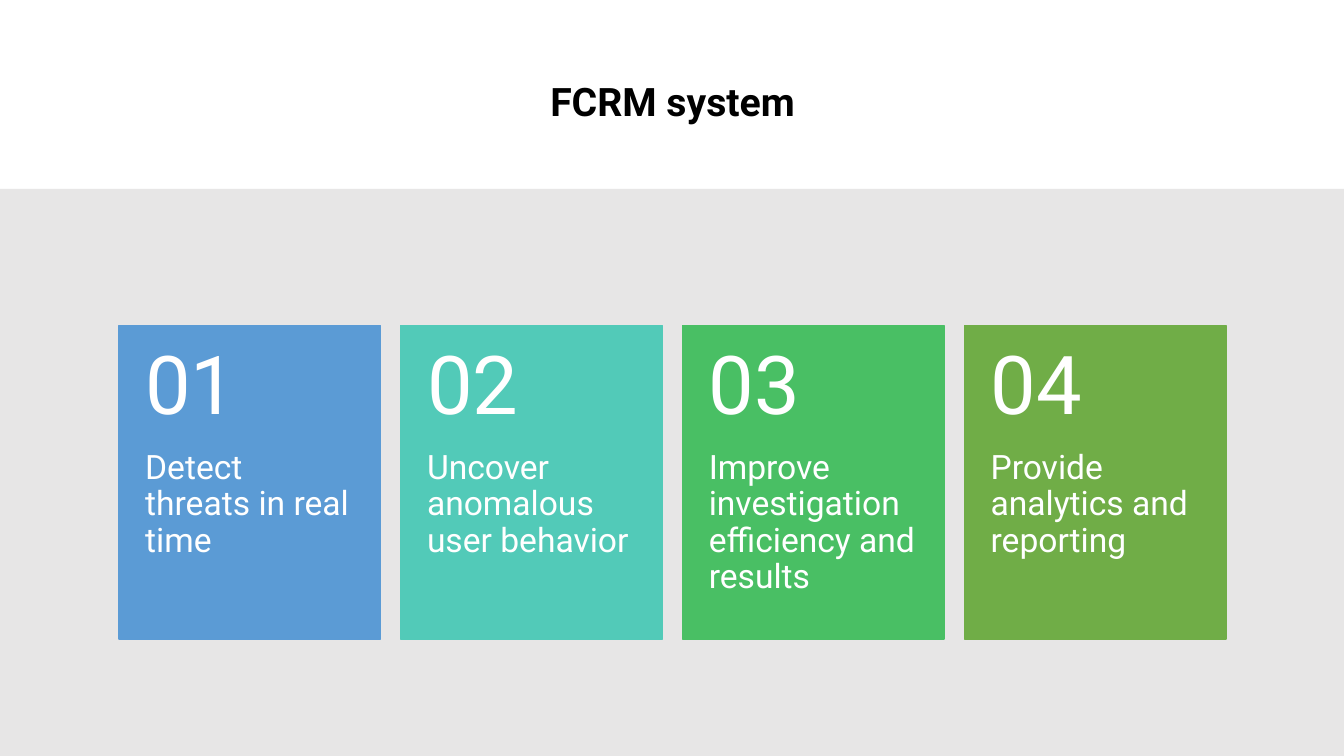
import pptx
import pptx.util
import pptx.dml.color
import pptx.enum.shapes
import pptx.enum.text

RGBColor = pptx.dml.color.RGBColor
Inches = pptx.util.Inches
PP_ALIGN = pptx.enum.text.PP_ALIGN
MSO_ANCHOR = pptx.enum.text.MSO_ANCHOR

BLACK = RGBColor(0x00, 0x00, 0x00)
WHITE = RGBColor(0xFF, 0xFF, 0xFF)
GREY = RGBColor(0xE7, 0xE6, 0xE6)
BLUE = RGBColor(0x5B, 0x9B, 0xD5)
TEAL = RGBColor(0x52, 0xCA, 0xB8)
GREEN = RGBColor(0x49, 0xBF, 0x64)
OLIVE = RGBColor(0x70, 0xAD, 0x47)

WIDTH, HEIGHT = 13.33, 7.5
MARGIN, GAP = 1.18, 0.2
CONTENT_WIDTH = 10.98
CARD_TOP, NUMBER_HEIGHT, CAPTION_HEIGHT = 3.23, 1.24, 1.87

GOALS = [
    ("Detect threats in real time", BLUE),
    ("Uncover anomalous user behavior", TEAL),
    ("Improve investigation efficiency and results", GREEN),
    ("Provide analytics and reporting", OLIVE),
]


class SlideBuilder:
    """Draws numbered goal cards in one font on the current slide."""

    def __init__(self, slide, columns, font="Roboto"):
        self.slide = slide
        self.font = font
        self.card_width = (CONTENT_WIDTH - GAP * (columns - 1)) / columns

    def panel(self, left, top, width, height, color, outlined=False):
        panel = self.slide.shapes.add_shape(
            pptx.enum.shapes.MSO_SHAPE.RECTANGLE,
            Inches(left), Inches(top), Inches(width), Inches(height))
        panel.shadow.inherit = False
        panel.fill.solid()
        panel.fill.fore_color.rgb = color
        if outlined:
            panel.line.color.rgb = color
            panel.line.width = pptx.util.Pt(1)
        else:
            panel.line.fill.background()

    def text(self, wording, left, top, width, height, size, color=WHITE,
             bold=False, align=PP_ALIGN.LEFT, anchor=MSO_ANCHOR.MIDDLE,
             spacing=0.9, insets=(0.26, 0.18, 0.26, 0.18)):
        box = self.slide.shapes.add_textbox(
            Inches(left), Inches(top), Inches(width), Inches(height))
        frame = box.text_frame
        frame.text = wording
        frame.word_wrap = True
        frame.vertical_anchor = anchor
        (frame.margin_left, frame.margin_top,
         frame.margin_right, frame.margin_bottom) = map(Inches, insets)
        paragraph = frame.paragraphs[0]
        paragraph.alignment = align
        paragraph.line_spacing = spacing
        font = paragraph.runs[0].font
        font.name = self.font
        font.size = pptx.util.Pt(size)
        font.bold = bold
        font.color.rgb = color

    def card(self, column, goal, color):
        left = MARGIN + column * (self.card_width + GAP)
        caption_top = CARD_TOP + NUMBER_HEIGHT
        self.panel(left, CARD_TOP, self.card_width,
                   NUMBER_HEIGHT + CAPTION_HEIGHT, color, outlined=True)
        self.text(goal, left, caption_top, self.card_width, CAPTION_HEIGHT, 24,
                  anchor=MSO_ANCHOR.TOP, insets=(0.26, 0, 0.26, 0.36))
        self.text(f"{column + 1:02d}", left, CARD_TOP,
                  self.card_width, NUMBER_HEIGHT, 58)


def main():
    presentation = pptx.Presentation()
    presentation.slide_width = Inches(WIDTH)
    presentation.slide_height = Inches(HEIGHT)
    slide = presentation.slides.add_slide(presentation.slide_layouts[6])
    builder = SlideBuilder(slide, len(GOALS))

    builder.text("FCRM system", MARGIN, 0.49, CONTENT_WIDTH, 0.97, 28, BLACK,
                 bold=True, align=PP_ALIGN.CENTER, spacing=1.1,
                 insets=(0.1, 0.05, 0.1, 0.05))
    builder.panel(0, HEIGHT / 4, WIDTH, HEIGHT * 3 / 4, GREY)
    for column, (goal, color) in enumerate(GOALS):
        builder.card(column, goal, color)

    presentation.save("out.pptx")


if __name__ == "__main__":
    main()
